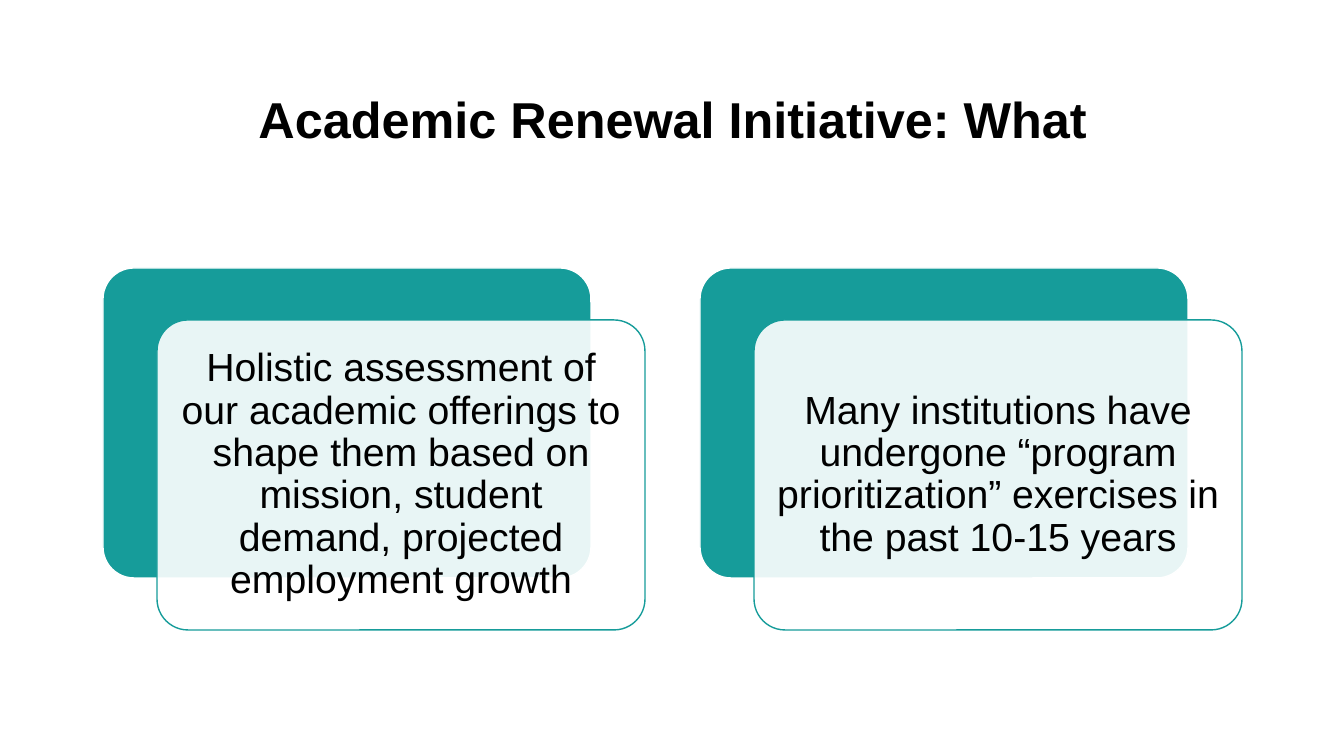
from lxml import etree
from pptx import Presentation
from pptx import util as u
from pptx.dml.color import RGBColor
from pptx.enum import shapes, text
from pptx.oxml.ns import qn

PX = 914400 / 100.8
TEAL = RGBColor(0x16, 0x9C, 0x9A)
WHITE = RGBColor(0xFF, 0xFF, 0xFF)
BLACK = RGBColor(0x00, 0x00, 0x00)


def px(*lengths):
    return [u.Emu(round(length * PX)) for length in lengths]


def write_text(shape, wording, size, bold=False, inset=10):
    frame = shape.text_frame
    frame.word_wrap = True
    frame.vertical_anchor = text.MSO_ANCHOR.MIDDLE
    frame.margin_left = frame.margin_right = px(inset)[0]
    frame.margin_top = frame.margin_bottom = px(inset)[0]
    paragraph = frame.paragraphs[0]
    paragraph.alignment = text.PP_ALIGN.CENTER
    paragraph.line_spacing = 0.9
    run = paragraph.add_run()
    run.text = wording
    run.font.name = "Arial"
    run.font.size = u.Pt(size)
    run.font.bold = bold
    run.font.color.rgb = BLACK


presentation = Presentation()
presentation.slide_width, presentation.slide_height = px(1344, 756)
slide = presentation.slides.add_slide(presentation.slide_layouts[6])

# Title
title = slide.shapes.add_textbox(*px(168, 60, 1010, 125))
write_text(title, "Academic Renewal Initiative: What", 36, bold=True)

# Each statement: a teal card with a translucent white card shifted over it
STATEMENTS = [
    "Holistic assessment of our academic offerings to shape them based on "
    "mission, student demand, projected employment growth",
    "Many institutions have undergone “program prioritization” exercises "
    "in the past 10-15 years",
]
LEFT, TOP, WIDTH, HEIGHT = 103, 268, 488, 310
COLUMN_STEP, SHIFT_X, SHIFT_Y = 597, 54, 52

for column, statement in enumerate(STATEMENTS):
    left = LEFT + column * COLUMN_STEP
    for x, y, fill, line in [
        (left, TOP, TEAL, WHITE),
        (left + SHIFT_X, TOP + SHIFT_Y, WHITE, TEAL),
    ]:
        card = slide.shapes.add_shape(
            shapes.MSO_SHAPE.ROUNDED_RECTANGLE, *px(x, y, WIDTH, HEIGHT))
        card.adjustments[0] = 0.1
        card.shadow.inherit = False
        card.fill.solid()
        card.fill.fore_color.rgb = fill
        card.line.color.rgb = line
        card.line.width = u.Pt(1)

    # The last card drawn is the front one: 90% opaque, holding the text
    color = card.fill._xPr.find(qn("a:solidFill"))[0]
    etree.SubElement(color, qn("a:alpha"), val="90000")
    write_text(card, statement, 28, inset=12)

presentation.save("out.pptx")
